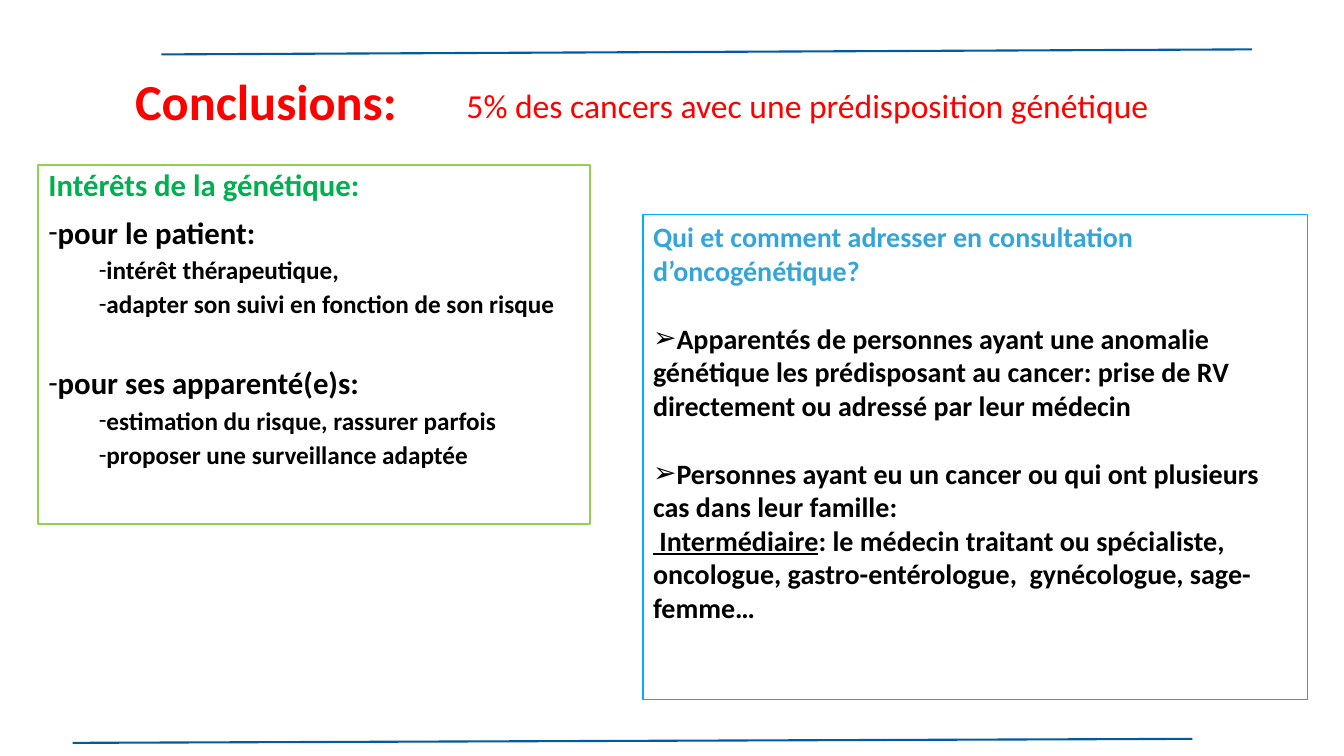
from dataclasses import dataclass
from lxml.etree import SubElement
from pptx import Presentation
from pptx.dml.color import RGBColor as RGB
from pptx.enum.shapes import MSO_CONNECTOR as Connector, MSO_SHAPE as Shape
from pptx.enum.text import MSO_ANCHOR as Anchor, MSO_AUTO_SIZE as AutoSize, PP_ALIGN as Align
from pptx.oxml.ns import qn
from pptx.util import Pt


@dataclass(frozen=True)
class Theme:
    """Colours, type sizes and font of the slide."""
    font: str = "Calibri"
    rule: str = "005C9E"
    red: str = "FF0000"
    green: str = "00B050"
    green_frame: str = "92D050"
    blue: str = "34A5D9"
    blue_frame: str = "00B0F0"
    black: str = "000000"
    title: int = 36
    subtitle: int = 24
    heading: int = 22
    detail: int = 18
    advice: int = 20


THEME = Theme()
TITLE = "Conclusions:"
KEY_FIGURE = "5% des cancers avec une prédisposition génétique"
BENEFITS_HEADING = "Intérêts de la génétique:"
BENEFITS = [
    ("pour le patient:",
     ["intérêt thérapeutique,", "adapter son suivi en fonction de son risque"]),
    ("pour ses apparenté(e)s:",
     ["estimation du risque, rassurer parfois", "proposer une surveillance adaptée"]),
]
REFERRAL_HEADING = "Qui et comment adresser en consultation d’oncogénétique?"
REFERRALS = [
    "Apparentés de personnes ayant une anomalie génétique les prédisposant au cancer: "
    "prise de RV directement ou adressé par leur médecin",
    "Personnes ayant eu un cancer ou qui ont plusieurs cas dans leur famille:",
]
GO_BETWEEN = (" Intermédiaire", ": le médecin traitant ou spécialiste, oncologue, "
              "gastro-entérologue,  gynécologue, sage-femme…")

RULES = [(51.84, 530.64, 851.76, 527.76), (115.2, 38.88, 894.24, 35.28)]
TITLE_BOX = (89.28, 51.12, 517.68, 46.08)
KEY_FIGURE_BOX = (326.16, 56.88, 599.76, 36)
BENEFITS_BOX = (27.36, 118.08, 393.84, 256.32)
REFERRAL_BOX = (459.36, 153.36, 474.48, 346.32)
GROUP_GAP = 34.8
REFERRAL_GAP = 24.4


def place(shape, box):
    """Move and size a shape in points."""
    shape.left, shape.top, shape.width, shape.height = map(Pt, box)


def prepare(frame, anchor=Anchor.TOP):
    """Give a text frame wrapping, fixed size and an anchor."""
    frame.word_wrap = True
    frame.auto_size = AutoSize.NONE
    frame.vertical_anchor = anchor
    return frame


def write(frame, parts, size, color, bold=True, bullet=None, level=0, before=0, spacing=1):
    """Fill the first empty paragraph or add one, then format it."""
    paragraph = frame.paragraphs[0] if not frame.text else frame.add_paragraph()
    for part in parts:
        paragraph.add_run().text = part
    properties = paragraph._p.get_or_add_pPr()
    properties.set("marL", str(Pt(36 * level)))
    properties.set("indent", "0")
    if bullet:
        SubElement(properties, qn("a:buFont"), typeface=THEME.font)
        SubElement(properties, qn("a:buChar"), char=bullet)
    else:
        SubElement(properties, qn("a:buNone"))
    paragraph.level = level
    paragraph.alignment = Align.LEFT
    paragraph.line_spacing = spacing
    paragraph.space_before = Pt(before)
    font = paragraph.font
    font.name, font.size, font.bold = THEME.font, Pt(size), bold
    font.color.rgb = RGB.from_string(color)
    return paragraph


def outline(line, color, width):
    """Colour a line and set its width."""
    line.color.rgb = RGB.from_string(color)
    line.width = Pt(width)


def add_rules(slide):
    """Draw the two slanted rules."""
    for ends in RULES:
        rule = slide.shapes.add_connector(Connector.STRAIGHT, *map(Pt, ends))
        outline(rule.line, THEME.rule, 1.5)
        SubElement(rule._element.spPr, qn("a:effectLst"))


def add_heading(slide):
    """Fill the title and the key figure beside it."""
    title = slide.shapes.title
    place(title, TITLE_BOX)
    write(prepare(title.text_frame, Anchor.BOTTOM), [TITLE], THEME.title, THEME.red, spacing=0.9)
    key_figure = slide.shapes.add_textbox(*map(Pt, KEY_FIGURE_BOX))
    write(prepare(key_figure.text_frame), [KEY_FIGURE], THEME.subtitle, THEME.red, bold=False)


def add_benefits(slide):
    """Fill the framed list of benefits."""
    benefits = slide.placeholders[1]
    place(benefits, BENEFITS_BOX)
    outline(benefits.line, THEME.green_frame, 1.5)
    frame = prepare(benefits.text_frame)
    write(frame, [BENEFITS_HEADING], THEME.heading, THEME.green, spacing=0.9)
    for index, (group, details) in enumerate(BENEFITS):
        write(frame, [group], THEME.heading, THEME.black, bullet="-",
              before=GROUP_GAP if index else 10, spacing=0.9)
        for detail in details:
            write(frame, [detail], THEME.detail, THEME.black, bullet="-",
                  level=1, before=5, spacing=0.9)


def add_referrals(slide):
    """Draw the framed advice on referral."""
    referral = slide.shapes.add_shape(Shape.RECTANGLE, *map(Pt, REFERRAL_BOX))
    referral.shadow.inherit = False
    referral.fill.background()
    outline(referral.line, THEME.blue_frame, 1)
    frame = prepare(referral.text_frame)
    write(frame, [REFERRAL_HEADING], THEME.advice, THEME.blue)
    for advice in REFERRALS:
        write(frame, [advice], THEME.advice, THEME.black, bullet="➢", before=REFERRAL_GAP)
    go_between = write(frame, GO_BETWEEN, THEME.advice, THEME.black)
    go_between.runs[0].font.underline = True


def main():
    """Build and save the slide."""
    deck = Presentation()
    deck.slide_width, deck.slide_height = Pt(960), Pt(540)
    slide = deck.slides.add_slide(deck.slide_layouts[1])
    add_rules(slide)
    add_heading(slide)
    add_benefits(slide)
    add_referrals(slide)
    deck.save("out.pptx")


if __name__ == "__main__":
    main()
